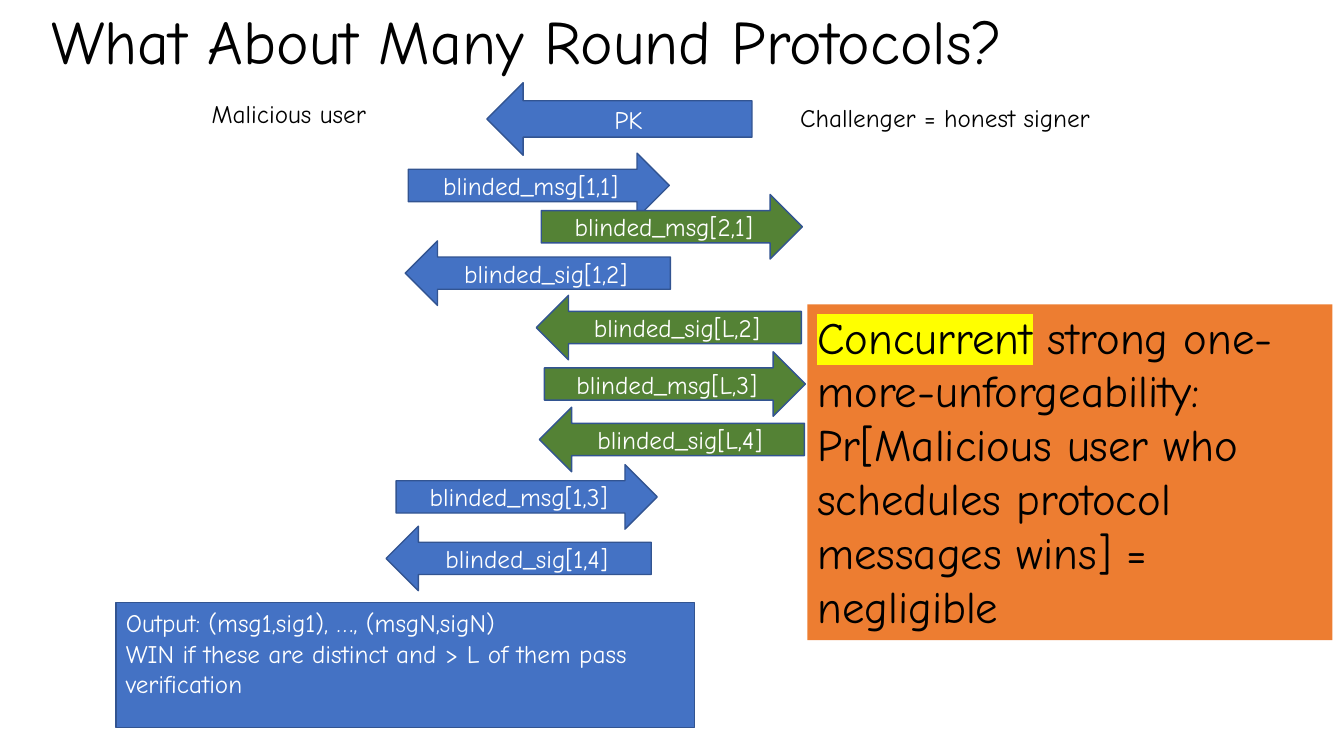
from pptx import Presentation
from pptx.dml.color import RGBColor
from pptx.enum.shapes import MSO_SHAPE as Shape
from pptx.enum.text import MSO_ANCHOR as Anchor, PP_ALIGN as Align
from pptx.oxml.ns import qn
from pptx.util import Inches, Pt
from lxml.etree import SubElement

FONT = "Comic Neue"
COLORS = {
    "black": "000000", "white": "FFFFFF", "blue": "4472C4", "green": "548235",
    "outline": "325491", "orange": "ED7D31", "yellow": "FFFF00",
}

# Grid of 40 columns by 30 rows
WIDTH, HEIGHT = Inches(13.33), Inches(7.5)
COLUMN, ROW = WIDTH / 40, HEIGHT / 30

# Message arrows: column, row, direction, colour, label
MESSAGES = [
    (12.15, 6.08, "right", "blue", "blinded_msg[1,1]"),
    (12.06, 9.56, "left", "blue", "blinded_sig[1,2]"),
    (16.11, 7.72, "right", "green", "blinded_msg[2,1]"),
    (15.96, 11.72, "left", "green", "blinded_sig[L,2]"),
    (11.79, 18.44, "right", "blue", "blinded_msg[1,3]"),
    (11.49, 20.88, "left", "blue", "blinded_sig[1,4]"),
    (16.2, 13.96, "right", "green", "blinded_msg[L,3]"),
    (16.05, 16.16, "left", "green", "blinded_sig[L,4]"),
]
ARROWS = {"right": (Shape.RIGHT_ARROW, 7.77), "left": (Shape.LEFT_ARROW, 7.89)}


def color(name):
    return RGBColor.from_string(COLORS[name])


def place(column, row, columns, rows):
    return (round(column * COLUMN), round(row * ROW),
            round(columns * COLUMN), round(rows * ROW))


def add_run(paragraph, text, size, ink, highlight=None):
    run = paragraph.add_run()
    run.text = text
    run.font.name = FONT
    run.font.size = Pt(size)
    run.font.color.rgb = color(ink)
    if highlight:
        properties = run.font._element
        mark = SubElement(properties, qn("a:highlight"))
        SubElement(mark, qn("a:srgbClr"), val=COLORS[highlight])
        properties.find(qn("a:solidFill")).addnext(mark)


def write(frame, paragraphs, size, ink, align=Align.LEFT, anchor=Anchor.TOP):
    """Each paragraph is a list of (text, highlight) runs."""
    frame.word_wrap = True
    frame.vertical_anchor = anchor
    for index, runs in enumerate(paragraphs):
        paragraph = frame.paragraphs[0] if index == 0 else frame.add_paragraph()
        paragraph.alignment = align
        for text, highlight in runs:
            add_run(paragraph, text, size, ink, highlight)


def add_title(slide, box, text):
    title = slide.shapes.title
    title.left, title.top, title.width, title.height = place(*box)
    write(title.text_frame, [[(text, None)]], 44, "black", anchor=Anchor.MIDDLE)
    title.text_frame.paragraphs[0].line_spacing = 0.9


def add_label(slide, box, text):
    label = slide.shapes.add_textbox(*place(*box))
    write(label.text_frame, [[(text, None)]], 18, "black")
    label.text_frame.word_wrap = False


def add_filled(slide, kind, box, fill, outline=None):
    shape = slide.shapes.add_shape(kind, *place(*box))
    shape.shadow.inherit = False
    shape.fill.solid()
    shape.fill.fore_color.rgb = color(fill)
    if outline:
        shape.line.color.rgb = color(outline)
        shape.line.width = Pt(1)
    else:
        shape.line.fill.background()
    return shape


def add_arrow(slide, direction, column, row, rows, fill, text):
    kind, columns = ARROWS[direction]
    arrow = add_filled(slide, kind, (column, row, columns, rows), fill, "outline")
    write(arrow.text_frame, [[(text, None)]], 18, "white", Align.CENTER, Anchor.MIDDLE)


def add_panel(slide, box, fill, paragraphs, size, ink, outline=None):
    panel = add_filled(slide, Shape.RECTANGLE, box, fill, outline)
    write(panel.text_frame, paragraphs, size, ink)


def main():
    presentation = Presentation()
    presentation.slide_width, presentation.slide_height = WIDTH, HEIGHT
    slide = presentation.slides.add_slide(presentation.slide_layouts[5])

    # Title and the two parties
    add_title(slide, (1.23, 0.12, 34.17, 3.32), "What About Many Round Protocols?")
    add_label(slide, (6, 3.72, 5.49, 1.6), "Malicious user")
    add_label(slide, (23.52, 3.88, 9.78, 1.6), "Challenger = honest signer")

    # Public key, then the interleaved messages
    add_arrow(slide, "left", 14.49, 3.28, 2.88, "blue", "PK")
    for column, row, direction, fill, text in MESSAGES:
        add_arrow(slide, direction, column, row, 2.56, fill, text)

    # Winning condition
    add_panel(slide, (3.45, 23.92, 17.22, 4.96), "blue", [
        [("Output: (msg1,sig1), …, (msgN,sigN)", None)],
        [("WIN if these are distinct and > L of them pass verification", None)],
    ], 18, "white", "outline")

    # Security definition
    add_panel(slide, (24.03, 12.08, 15.63, 13.32), "orange", [
        [("Concurrent", "yellow"), (" strong one-more-unforgeability:", None)],
        [("Pr[Malicious user who schedules protocol messages wins] = negligible", None)],
    ], 32, "black")

    presentation.save("out.pptx")


if __name__ == "__main__":
    main()
